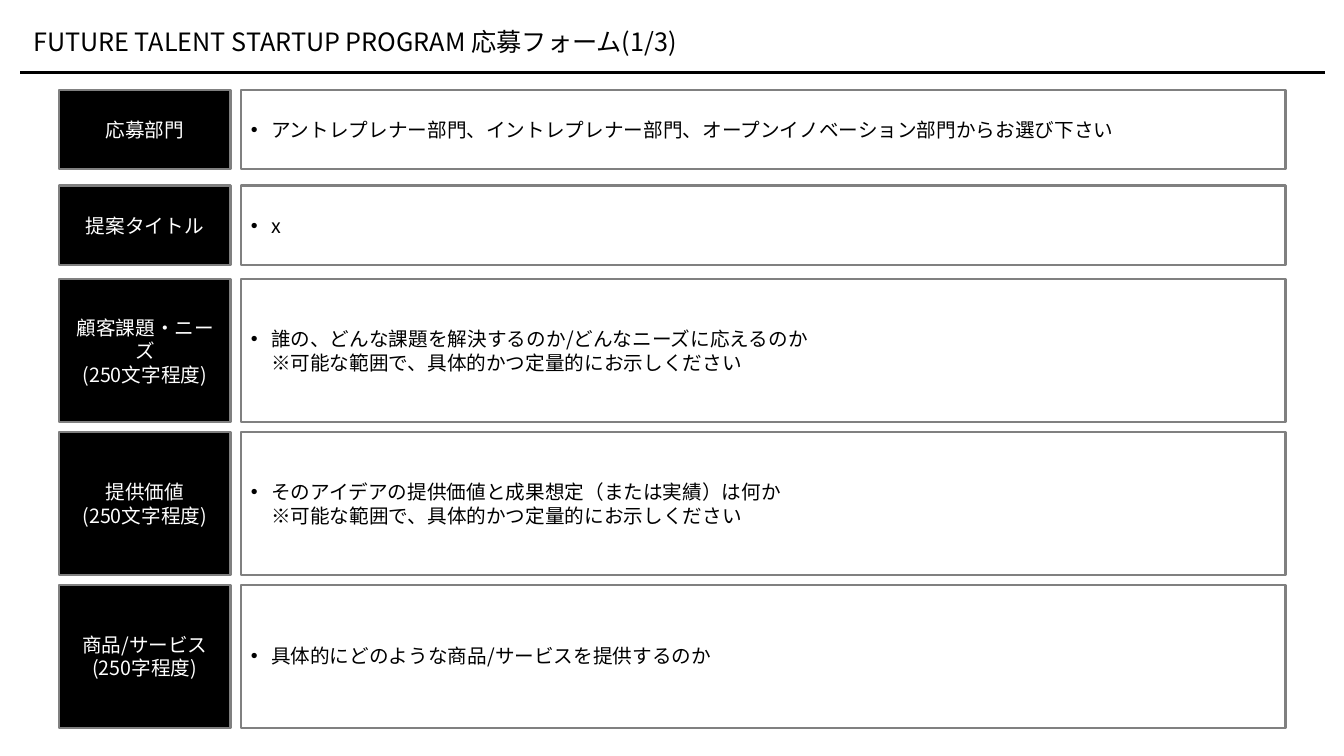
from copy import deepcopy
from dataclasses import dataclass

from pptx import Presentation
from pptx.dml.color import RGBColor
from pptx.enum.shapes import MSO_CONNECTOR, MSO_SHAPE
from pptx.enum.text import MSO_ANCHOR, PP_ALIGN
from pptx.oxml.ns import qn
from pptx.oxml.xmlchemy import OxmlElement
from pptx.shapes.autoshape import Shape
from pptx.slide import Slide
from pptx.text.text import _Paragraph
from pptx.util import Inches, Pt

WIDTH, HEIGHT = Inches(13.33), Inches(7.5)
FONT = "Noto Sans CJK JP"
COLORS = {"ink": "000000", "paper": "FFFFFF", "border": "808080"}

# Columns in percent of the slide width: left edge, width
LABEL_COLUMN = (4.4, 12.75)
ANSWER_COLUMN = (17.93, 77.72)


@dataclass(frozen=True)
class Question:
    label: tuple[str, ...]
    answer: str
    label_wraps: bool = True


@dataclass(frozen=True)
class Band:
    """Evenly spaced questions; lengths in percent of the slide height."""
    top: float
    pitch: float
    row_height: float
    questions: tuple[Question, ...]


BANDS = (
    Band(11.87, 12.67, 10.53, (
        Question(("応募部門",), "アントレプレナー部門、イントレプレナー部門、オープンイノベーション部門からお選び下さい"),
        Question(("提案タイトル",), "x"),
    )),
    Band(36.93, 20.2, 18.93, (
        Question(("顧客課題・ニーズ", "(250文字程度)"),
                 "誰の、どんな課題を解決するのか/どんなニーズに応えるのか\n※可能な範囲で、具体的かつ定量的にお示しください"),
        Question(("提供価値", "(250文字程度)"),
                 "そのアイデアの提供価値と成果想定（または実績）は何か\n※可能な範囲で、具体的かつ定量的にお示しください"),
        Question(("商品/サービス\n(250字程度)",),
                 "具体的にどのような商品/サービスを提供するのか", label_wraps=False),
    )),
)


def across(percent: float) -> int:
    return round(WIDTH * percent / 100)


def down(percent: float) -> int:
    return round(HEIGHT * percent / 100)


def color(name: str) -> RGBColor:
    return RGBColor.from_string(COLORS[name])


def write(paragraph: _Paragraph, text: str, size: float, ink: str) -> None:
    paragraph.text = text
    for run in paragraph.runs:
        for attribute, value in {"size": Pt(size), "name": FONT}.items():
            setattr(run.font, attribute, value)
        run.font.color.rgb = color(ink)
        east_asian = OxmlElement("a:ea")
        east_asian.set("typeface", FONT)
        run.font._element.append(east_asian)
    # Line breaks take the size of the text around them
    for line_break in paragraph._p.findall(qn("a:br")):
        line_break.append(deepcopy(paragraph.runs[0].font._element))


def add_bullet(paragraph: _Paragraph) -> None:
    properties = paragraph._p.get_or_add_pPr()
    for name, indent in {"marL": 0.2, "indent": -0.2}.items():
        properties.set(name, str(Inches(indent)))
    for tag, name, value in (("a:buFont", "typeface", "Arial"), ("a:buChar", "char", "•")):
        element = OxmlElement(tag)
        element.set(name, value)
        properties.append(element)


def add_cell(slide: Slide, column: tuple[float, float], top: float, height: float, fill: str) -> Shape:
    left, width = column
    cell = slide.shapes.add_shape(MSO_SHAPE.RECTANGLE, across(left), down(top), across(width), down(height))
    cell.shadow.inherit = False
    cell.fill.solid()
    cell.fill.fore_color.rgb = color(fill)
    cell.line.color.rgb = color("border")
    cell.line.width = Pt(1.5)
    for attribute, value in {"word_wrap": True, "vertical_anchor": MSO_ANCHOR.MIDDLE}.items():
        setattr(cell.text_frame, attribute, value)
    return cell


def add_question(slide: Slide, question: Question, top: float, height: float) -> None:
    label = add_cell(slide, LABEL_COLUMN, top, height, "ink").text_frame
    label.word_wrap = question.label_wraps
    for index, text in enumerate(question.label):
        paragraph = label.add_paragraph() if index else label.paragraphs[0]
        paragraph.alignment = PP_ALIGN.CENTER
        write(paragraph, text, 14, "paper")

    answer = add_cell(slide, ANSWER_COLUMN, top, height, "paper").text_frame.paragraphs[0]
    answer.alignment = PP_ALIGN.LEFT
    add_bullet(answer)
    write(answer, question.answer, 14, "ink")


def add_heading(slide: Slide) -> None:
    rule = slide.shapes.add_connector(
        MSO_CONNECTOR.STRAIGHT, across(1.5), down(9.6), across(98.57), down(9.6))
    rule.line.color.rgb = color("ink")
    rule.line.width = Pt(1.5)
    rule._element.spPr.append(OxmlElement("a:effectLst"))

    heading = slide.shapes.add_textbox(across(1.73), down(3.73), across(72.62), down(4)).text_frame
    frame_format = {"word_wrap": True, "vertical_anchor": MSO_ANCHOR.MIDDLE,
                    "margin_top": 0, "margin_bottom": 0}
    for attribute, value in frame_format.items():
        setattr(heading, attribute, value)
    heading.paragraphs[0].line_spacing = 0.9
    write(heading.paragraphs[0], "FUTURE TALENT STARTUP PROGRAM 応募フォーム(1/3)", 18, "ink")


def main() -> None:
    presentation = Presentation()
    presentation.slide_width, presentation.slide_height = WIDTH, HEIGHT
    slide = presentation.slides.add_slide(presentation.slide_layouts[6])

    # Title and rule
    add_heading(slide)

    # Form rows
    for band in BANDS:
        for row, question in enumerate(band.questions):
            add_question(slide, question, band.top + row * band.pitch, band.row_height)

    presentation.save("out.pptx")


if __name__ == "__main__":
    main()
